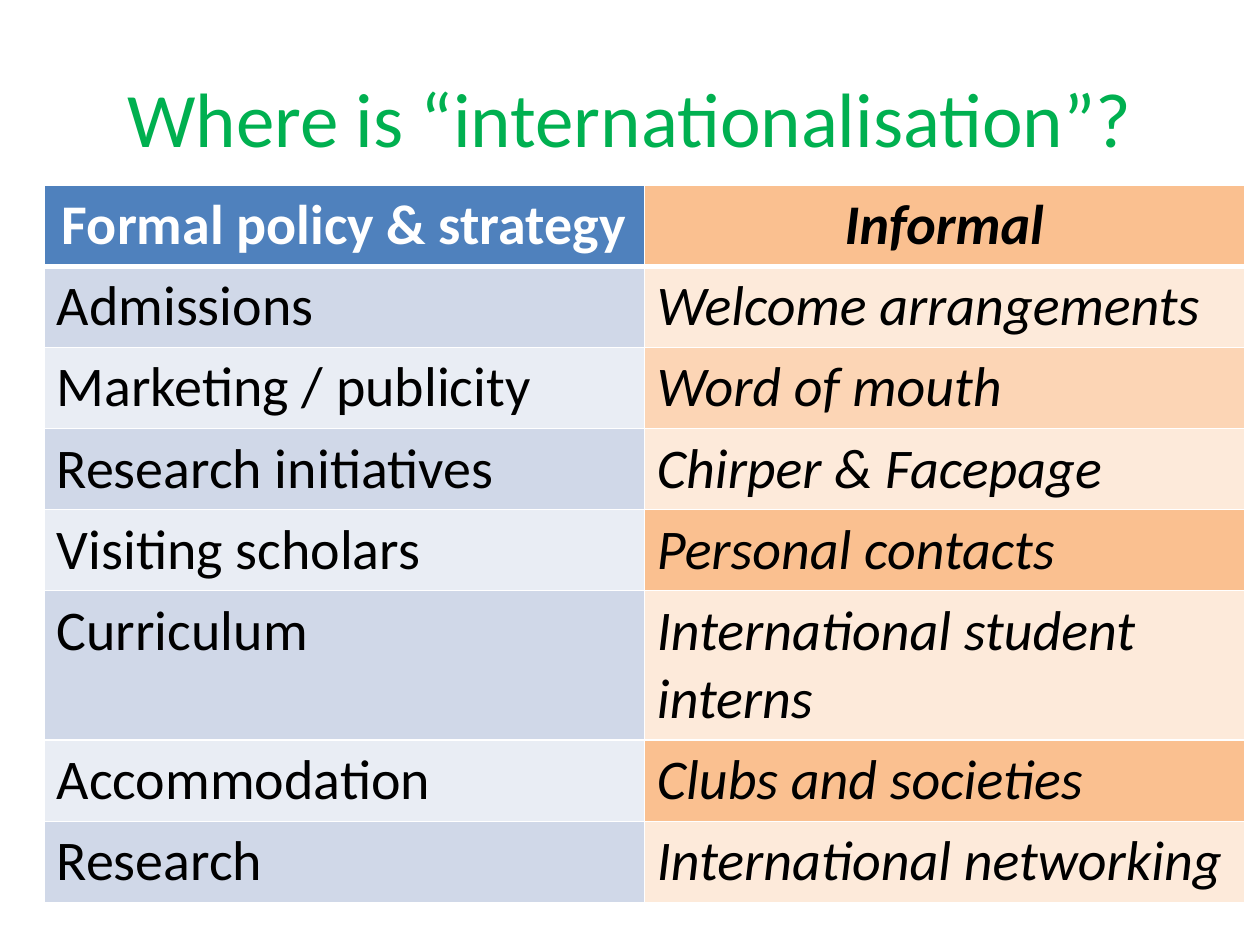
from pptx import Presentation
from pptx.dml.color import RGBColor as RGB
from pptx.enum.text import MSO_ANCHOR as ANCHOR, PP_ALIGN as ALIGN
from pptx.oxml import parse_xml
from pptx.oxml.ns import nsdecls
from pptx.util import Pt

# Content
TITLE = "Where is “internationalisation”?"
HEADERS = ("Formal policy & strategy", "Informal")
# formal item, informal item, fill of the informal cell
ROWS = [
    ("Admissions", "Welcome arrangements", "pale"),
    ("Marketing / publicity", "Word of mouth", "medium"),
    ("Research initiatives", "Chirper & Facepage", "pale"),
    ("Visiting scholars", "Personal contacts", "strong"),
    ("Curriculum", "International student interns", "pale"),
    ("Accommodation", "Clubs and societies", "strong"),
    ("Research", "International networking", "pale"),
]

THEME = {
    "font": "Calibri", "title_size": 44, "table_size": 32,
    "title": "00B050", "text": "000000", "white": "FFFFFF",
    "header": "4F81BD", "bands": ("D0D8E8", "E9EDF4"),
    "pale": "FDEADA", "medium": "FCD5B5", "strong": "FAC090",
}

# Layout in points
TITLE_BOX = (36, 21.6, 648, 90)
TABLE_BOX = (25.2, 105.8, 686, 403.2)
MIN_ROW = 29.5  # rows grow to fit their text


def write(tf, text, size, color="text", align=ALIGN.LEFT, bold=False, italic=False):
    p = tf.paragraphs[0]
    p.alignment = align
    r = p.add_run()
    r.text = text
    r.font.name = THEME["font"]
    r.font.size = Pt(size)
    r.font.bold = bold
    r.font.italic = italic
    r.font.color.rgb = RGB.from_string(THEME[color])


def set_borders(cell, top=1, bottom=1):
    """Draw white borders; they must precede the fill in the cell properties."""
    props = cell._tc.get_or_add_tcPr()
    for i, (side, width) in enumerate((("L", 1), ("R", 1), ("T", top), ("B", bottom))):
        props.insert(i, parse_xml(
            f'<a:ln{side} {nsdecls("a")} w="{Pt(width)}"><a:solidFill>'
            f'<a:srgbClr val="{THEME["white"]}"/></a:solidFill></a:ln{side}>'))


def fill_cell(cell, text, fill, top=1, bottom=1, **fmt):
    cell.fill.solid()
    cell.fill.fore_color.rgb = RGB.from_string(fill)
    set_borders(cell, top, bottom)
    write(cell.text_frame, text, THEME["table_size"], **fmt)


def add_title(slide):
    sp = slide.shapes.title
    sp.left, sp.top, sp.width, sp.height = map(Pt, TITLE_BOX)
    tf = sp.text_frame
    tf.vertical_anchor = ANCHOR.MIDDLE
    write(tf, TITLE, THEME["title_size"], color="title", align=ALIGN.CENTER)


def add_policy_table(slide):
    frame = slide.shapes.add_table(len(ROWS) + 1, len(HEADERS), *map(Pt, TABLE_BOX))
    table = frame.table
    for row in table.rows:
        row.height = Pt(MIN_ROW)
    frame.height = Pt(TABLE_BOX[3])

    # Header row
    head = dict(bottom=3, align=ALIGN.CENTER, bold=True)
    fill_cell(table.cell(0, 0), HEADERS[0], THEME["header"], color="white", **head)
    fill_cell(table.cell(0, 1), HEADERS[1], THEME["strong"], italic=True, **head)

    # Body rows
    for i, (formal, informal, tint) in enumerate(ROWS):
        top = 3 if i == 0 else 1
        fill_cell(table.cell(i + 1, 0), formal, THEME["bands"][i % 2], top=top)
        fill_cell(table.cell(i + 1, 1), informal, THEME[tint], top=top, italic=True)


def main():
    prs = Presentation()
    prs.slide_width, prs.slide_height = Pt(720), Pt(540)
    slide = prs.slides.add_slide(prs.slide_layouts[5])
    add_title(slide)
    add_policy_table(slide)
    prs.save("out.pptx")


if __name__ == "__main__":
    main()
